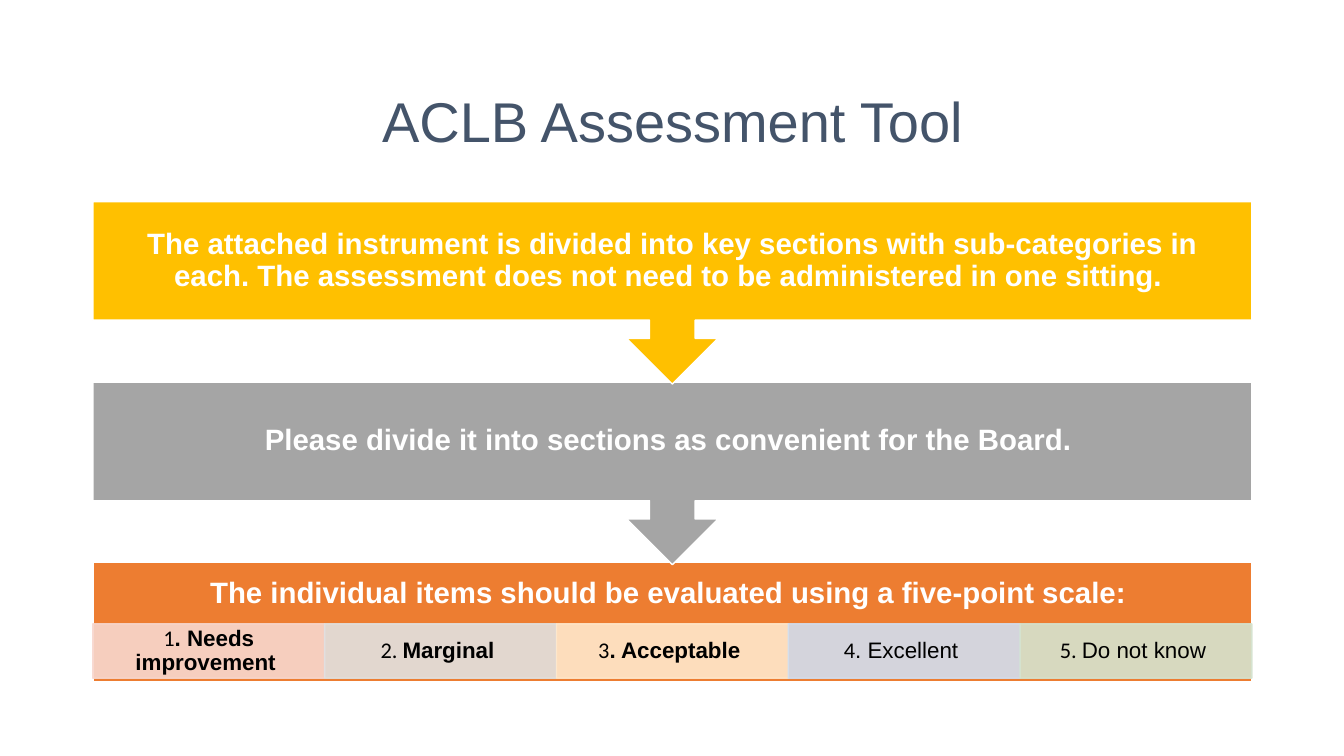
from lxml.etree import SubElement
from pptx import Presentation
from pptx.dml.color import RGBColor as RGB
from pptx.enum.shapes import MSO_SHAPE as SHAPE
from pptx.enum.text import MSO_ANCHOR as ANCHOR, PP_ALIGN as ALIGN
from pptx.oxml.ns import qn
from pptx.util import Cm, Pt

THEME = {
    "font": "Arial", "number_font": "Calibri",
    "title_size": 40, "step_size": 21, "scale_size": 16,
    "title": "44546A", "light": "FFFFFF", "dark": "000000",
    "first": "FFC000", "second": "A5A5A5", "third": "ED7D31",
    "scale": ["F8D7CE", "E1E1E1", "FFE8CC", "D2DEEF", "D5E3CF"],
}
LEFT, WIDTH = 2.34, 29.21
STEP_TOP, STEP_PITCH = 5.08, 4.55
CALLOUT_H, BAND_H = 4.6, 3.0
SCALE_TOP, SCALE_H = 15.72, 1.37


def add_box(kind, top, height, fill, line, left=LEFT, width=WIDTH):
    sp = s.shapes.add_shape(kind, Cm(left), Cm(top), Cm(width), Cm(height))
    sp.shadow.inherit = False
    sp.fill.solid()
    sp.fill.fore_color.rgb = RGB.from_string(fill)
    sp.line.color.rgb = RGB.from_string(line)
    sp.line.width = Pt(1)
    return sp


def write(sp, runs, size, color, pad_x, pad_y, pad_bottom=None):
    """Fill a shape with one centred paragraph of (text, font, bold) runs."""
    tf = sp.text_frame
    tf.word_wrap = True
    tf.vertical_anchor = ANCHOR.MIDDLE
    tf.margin_left = tf.margin_right = Cm(pad_x)
    tf.margin_top = Cm(pad_y)
    tf.margin_bottom = Cm(pad_y if pad_bottom is None else pad_bottom)
    p = tf.paragraphs[0]
    p.alignment = ALIGN.CENTER
    p.line_spacing = 0.9
    for text, font, bold in runs:
        r = p.add_run()
        r.text = text
        r.font.name = font
        r.font.size = Pt(size)
        r.font.bold = bold
        r.font.color.rgb = RGB.from_string(color)


prs = Presentation()
prs.slide_width, prs.slide_height = Cm(33.87), Cm(19.05)
s = prs.slides.add_slide(prs.slide_layouts[6])
font, number_font = THEME["font"], THEME["number_font"]

# Title
title = s.shapes.add_textbox(Cm(LEFT), Cm(1.55), Cm(WIDTH), Cm(3.15))
write(title, [("ACLB Assessment Tool", font, False)],
      THEME["title_size"], THEME["title"], 0.25, 0.13)

# Steps, bottom one first so that each arrow tip lies over the next step
steps = [
    ("The attached instrument is divided into key sections with sub-categories in each. "
     "The assessment does not need to be administered in one sitting. ",
     "first", SHAPE.DOWN_ARROW_CALLOUT, CALLOUT_H, 0.4),
    ("Please divide it into sections as convenient for the Board. ",
     "second", SHAPE.DOWN_ARROW_CALLOUT, CALLOUT_H, 0.4),
    ("The individual items should be evaluated using a five-point scale: ",
     "third", SHAPE.RECTANGLE, BAND_H, 1.8),
]
for i, (text, color, kind, height, pad_bottom) in reversed(list(enumerate(steps))):
    sp = add_box(kind, STEP_TOP + i * STEP_PITCH, height, THEME[color], THEME["light"])
    write(sp, [(text, font, True)], THEME["step_size"], THEME["light"],
          0.4, 0.4, pad_bottom)

# Five-point scale along the foot of the last step
scale = [
    ("1", ". Needs improvement ", True),
    ("2. ", "Marginal ", True),
    ("3", ". Acceptable ", True),
    ("4", ". Excellent ", False),
    ("5. ", "Do not know ", False),
]
cell_w = WIDTH / len(scale)
for i, (number, label, bold) in enumerate(scale):
    color = THEME["scale"][i]
    sp = add_box(SHAPE.RECTANGLE, SCALE_TOP, SCALE_H, color, color,
                 LEFT + i * cell_w, cell_w)
    # 90 % opacity for fill and line
    for clr in sp.element.spPr.iter(qn("a:srgbClr")):
        SubElement(clr, qn("a:alpha"), val="90000")
    write(sp, [(number, number_font, False), (label, font, bold)],
          THEME["scale_size"], THEME["dark"], 0.3, 0.05)

prs.save("out.pptx")
